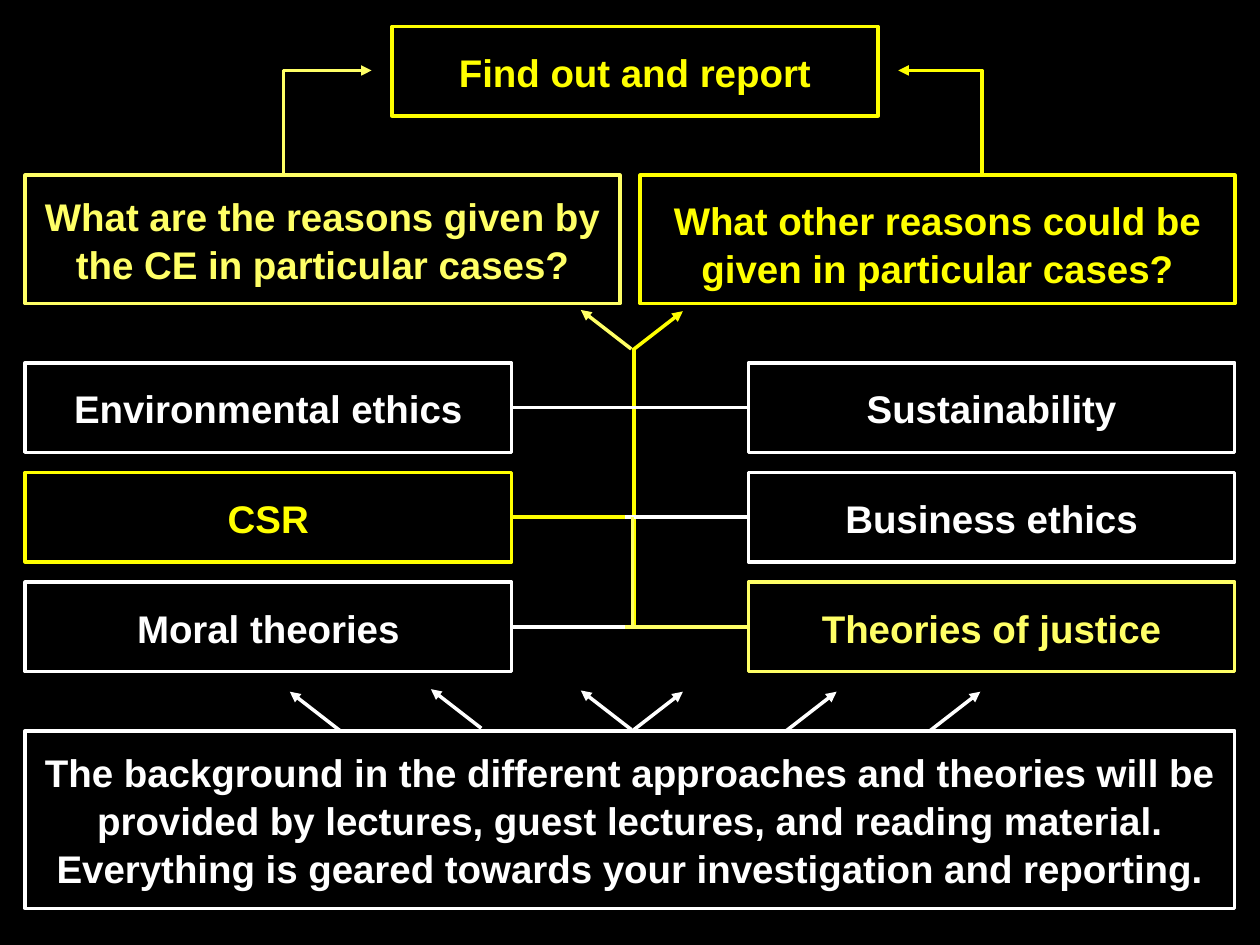
"""Build a slide that maps ethical approaches to the questions to report on."""
from lxml.etree import SubElement
from pptx import Presentation
from pptx.dml.color import RGBColor
from pptx.enum.shapes import MSO_CONNECTOR, MSO_SHAPE
from pptx.enum.text import MSO_ANCHOR, MSO_AUTO_SIZE, PP_ALIGN
from pptx.oxml.ns import qn
from pptx.util import Inches, Pt

THEME = {
    "font": "Arial", "size": Pt(22), "leading": 1.04,
    "border": Pt(2), "spine": Pt(2.25),
    "black": RGBColor(0, 0, 0), "white": RGBColor(255, 255, 255),
    "yellow": RGBColor(255, 255, 0), "pale": RGBColor(255, 255, 102),
}
HEADING = "Find out and report"
QUESTIONS = [
    ("What are the reasons given by the CE in particular cases?", "pale", 0.05),
    ("What other reasons could be given in particular cases?", "yellow", 0.11),
]
APPROACHES = [
    [("Environmental ethics", "white"), ("Sustainability", "white")],
    [("CSR", "yellow"), ("Business ethics", "white")],
    [("Moral theories", "white"), ("Theories of justice", "pale")],
]
BACKGROUND = [
    "The background in the different approaches and theories will be provided "
    "by lectures, guest lectures, and reading material.",
    "Everything is geared towards your investigation and reporting.",
]
ROUTES = [((4.29, 1.39), (2.95, 0.56), "pale", 152200),
          ((8.46, 1.39), (7.13, 0.56), "yellow", 50000)]
FORK = [(5.01, 2.77, -1, "pale"), (5.02, 2.78, 1, "yellow")]
RISERS = [(2.7, 5.8, -1), (3.82, 5.78, -1), (5.01, 5.79, -1),
          (5.02, 5.8, 1), (6.24, 5.8, 1), (7.38, 5.8, 1)]

LEFT, RIGHT = 0.2, 9.8
QUESTION_W, QUESTION_H = 4.72, 1.02
ITEM_W, ITEM_H = 3.86, 0.71
ROW_TOP, ROW_STEP = 2.88, 0.87
SPINE_X, OVERLAP = 5.03, 0.01
SPUR_ENDS = (5.04, 4.96)
ARROW_DX, ARROW_DY = 0.4, 0.31


def style_box(box, paragraphs, color, left, top, width, height, inset=0.05):
    box.left, box.top, box.width, box.height = map(Inches, (left, top, width, height))
    box.fill.background()
    box.line.color.rgb = THEME[color]
    box.line.width = THEME["border"]
    frame = box.text_frame
    frame.text = "\n".join(paragraphs)
    frame.word_wrap = True
    frame.auto_size = MSO_AUTO_SIZE.NONE
    frame.vertical_anchor = MSO_ANCHOR.MIDDLE
    frame.margin_top = Inches(inset)
    for paragraph in frame.paragraphs:
        paragraph.alignment = PP_ALIGN.CENTER
        paragraph.line_spacing = THEME["leading"]
        paragraph.font.name = THEME["font"]
        paragraph.font.size = THEME["size"]
        paragraph.font.bold = True
        paragraph.font.color.rgb = THEME[color]


def add_box(slide, paragraphs, color, *place):
    box = slide.shapes.add_shape(MSO_SHAPE.RECTANGLE, 0, 0, 0, 0)
    box.shadow.inherit = False
    style_box(box, paragraphs, color, *place)
    return box


def add_line(slide, start, end, color, width="border", arrow=False,
             kind=MSO_CONNECTOR.STRAIGHT):
    line = slide.shapes.add_connector(kind, *map(Inches, (*start, *end)))
    line.line.color.rgb = THEME[color]
    line.line.width = THEME[width]
    if arrow:
        SubElement(line.line._get_or_add_ln(), qn("a:tailEnd"), type="triangle")
    SubElement(line._element.spPr, qn("a:effectLst"))
    return line


def add_route(slide, start, end, color, bend):
    route = add_line(slide, start, end, color, arrow=True, kind=MSO_CONNECTOR.ELBOW)
    guides = route._element.spPr.find(qn("a:prstGeom")).get_or_add_avLst()
    SubElement(guides, qn("a:gd"), name="adj1", fmla=f"val {bend}")


def add_arrow(slide, x, y, direction, color):
    tip = (x + direction * ARROW_DX, y - ARROW_DY)
    add_line(slide, (x, y), tip, color, arrow=True)


def main():
    presentation = Presentation()
    presentation.slide_width, presentation.slide_height = Inches(10), Inches(7.5)
    slide = presentation.slides.add_slide(presentation.slide_layouts[5])
    slide.background.fill.solid()
    slide.background.fill.fore_color.rgb = THEME["black"]

    style_box(slide.shapes.title, [HEADING], "yellow", 3.11, 0.21, ITEM_W, ITEM_H)
    for left, (question, color, inset) in zip((LEFT, RIGHT - QUESTION_W), QUESTIONS):
        add_box(slide, [question], color, left, 1.39, QUESTION_W, QUESTION_H, inset)
    for route in ROUTES:
        add_route(slide, *route)

    middles = [ROW_TOP + row * ROW_STEP + ITEM_H / 2 for row in range(len(APPROACHES))]
    add_line(slide, (SPINE_X, 2.77), (SPINE_X, middles[-1]), "yellow", "spine")
    for middle, pair in zip(middles, APPROACHES):
        sides = zip(pair, (LEFT, RIGHT - ITEM_W), SPUR_ENDS, (3, 1))
        for (approach, color), left, spur_end, site in sides:
            box = add_box(slide, [approach], color,
                          left, middle - ITEM_H / 2, ITEM_W, ITEM_H)
            spur = add_line(slide, (left, middle), (spur_end, middle), color)
            spur.begin_connect(box, site)
    lower_x = SPINE_X - OVERLAP
    add_line(slide, (lower_x, middles[1]), (lower_x, middles[2]), "pale", "spine")

    for x, y, direction, color in FORK:
        add_arrow(slide, x, y, direction, color)
    add_box(slide, BACKGROUND, "white", LEFT, 5.8, RIGHT - LEFT, 1.41)
    for riser in RISERS:
        add_arrow(slide, *riser, "white")
    presentation.save("out.pptx")


if __name__ == "__main__":
    main()
